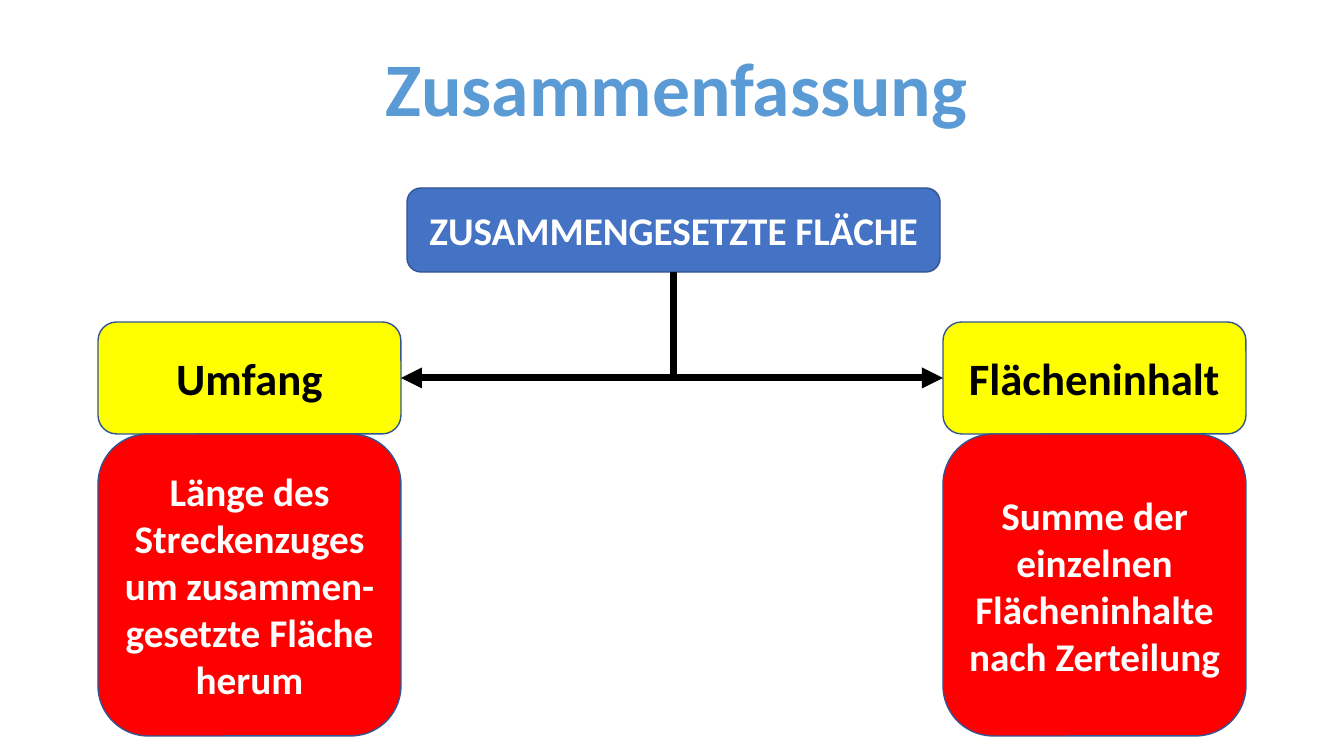
from pptx import Presentation
from pptx.dml.color import RGBColor
from pptx.enum.shapes import MSO_CONNECTOR, MSO_SHAPE
from pptx.enum.text import MSO_ANCHOR, PP_ALIGN
from pptx.oxml.ns import qn
from pptx.util import Pt
from lxml.etree import SubElement

PX = 914400 / 100.8
FONT = "Calibri"
COLORS = {
    "title": "5B9BD5",
    "blue": "4472C4",
    "yellow": "FFFF00",
    "red": "FF0000",
    "outline": "325491",
    "white": "FFFFFF",
    "black": "000000",
}
LEFT_SITE, BOTTOM_SITE, RIGHT_SITE = 1, 2, 3

# Column left edge, heading, explanation, side facing the middle
COLUMNS = [
    (98, "Umfang", "Länge des Streckenzuges um zusammen-gesetzte Fläche herum", RIGHT_SITE),
    (943, "Flächeninhalt", "Summe der einzelnen Flächeninhalte nach Zerteilung", LEFT_SITE),
]


def px(*lengths):
    return [round(length * PX) for length in lengths]


def color(name):
    return RGBColor.from_string(COLORS[name])


def write(shape, text, size, text_color):
    frame = shape.text_frame
    frame.text = text
    frame.vertical_anchor = MSO_ANCHOR.MIDDLE
    para = frame.paragraphs[0]
    para.alignment = PP_ALIGN.CENTER
    font = para.runs[0].font
    font.name, font.size, font.bold = FONT, Pt(size), True
    font.color.rgb = color(text_color)


def add_title(slide, text):
    title = slide.shapes.title
    title.left, title.top, title.width, title.height = px(372, 35, 609, 102)
    write(title, text, 54, "title")
    title.text_frame.word_wrap = False


def add_box(slide, bounds, text, size, fill, text_color):
    box = slide.shapes.add_shape(MSO_SHAPE.ROUNDED_RECTANGLE, *px(*bounds))
    box.shadow.inherit = False
    box.fill.solid()
    box.fill.fore_color.rgb = color(fill)
    box.line.color.rgb = color("outline")
    box.line.width = Pt(1)
    write(box, text, size, text_color)
    box.text_frame.word_wrap = True
    return box


def add_branch(slide, target, site, source):
    """Elbow from the side of target to the bottom of source, arrowhead at target."""
    branch = slide.shapes.add_connector(MSO_CONNECTOR.ELBOW, 0, 0, 0, 0)
    branch.begin_connect(target, site)
    branch.end_connect(source, BOTTOM_SITE)
    branch.line.color.rgb = color("black")
    branch.line.width = Pt(5)
    properties = branch._element.spPr
    properties.find(qn("a:prstGeom")).set("prst", "bentConnector2")
    SubElement(properties.find(qn("a:ln")), qn("a:headEnd"), type="triangle")
    SubElement(properties, qn("a:effectLst"))


def main():
    deck = Presentation()
    deck.slide_width, deck.slide_height = px(1344, 756)
    slide = deck.slides.add_slide(deck.slide_layouts[5])

    # Title and top of the tree
    add_title(slide, "Zusammenfassung")
    root = add_box(slide, (407, 188, 533, 84), "ZUSAMMENGESETZTE FLÄCHE",
                   28, "blue", "white")

    # Two columns, each joined to the top box
    for left, heading, explanation, site in COLUMNS:
        target = add_box(slide, (left, 322, 303, 112), heading, 32, "yellow", "black")
        add_box(slide, (left, 434, 303, 302), explanation, 28, "red", "white")
        add_branch(slide, target, site, root)

    deck.save("out.pptx")


if __name__ == "__main__":
    main()
